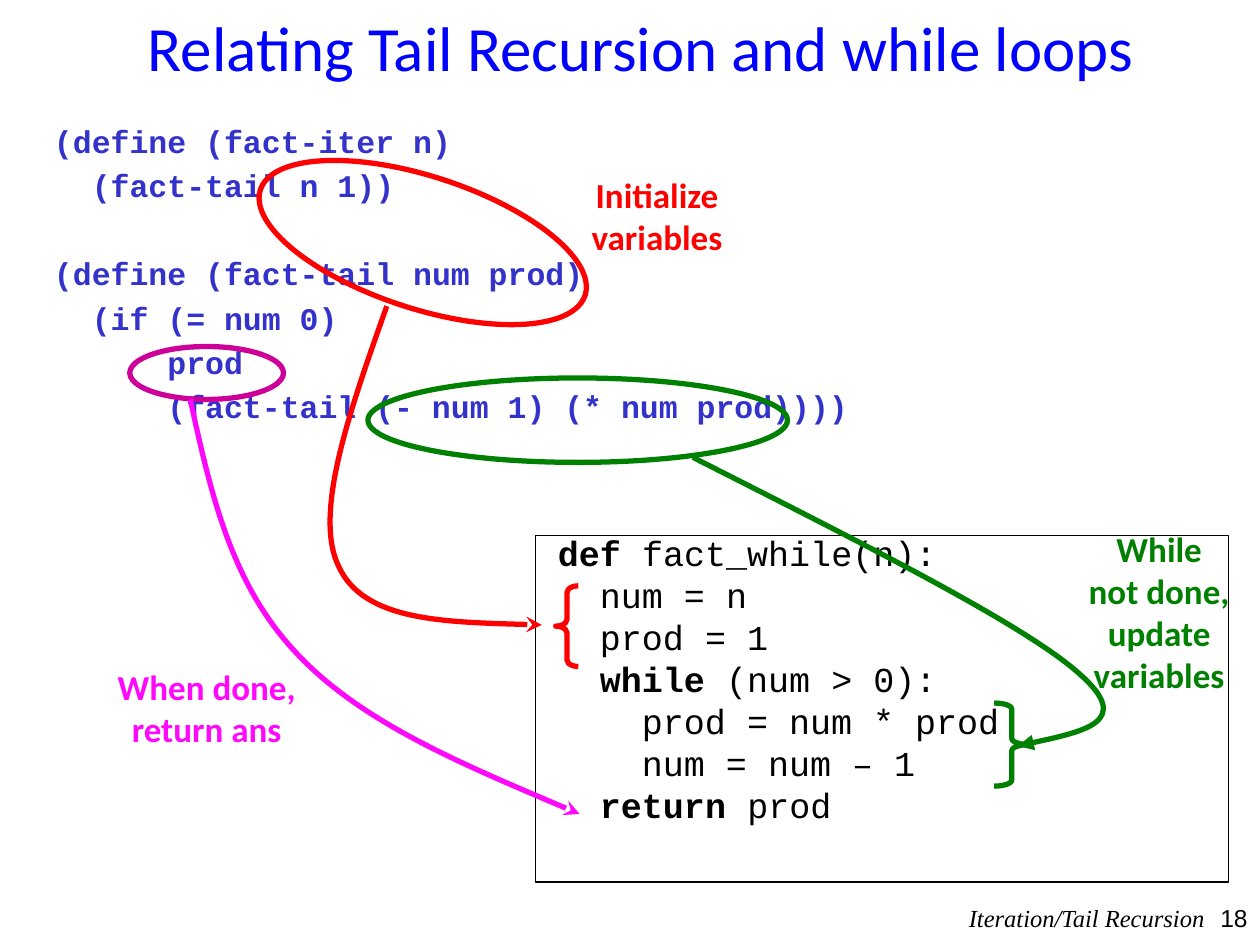
from dataclasses import dataclass
from typing import Optional

import pptx
import pptx.dml.color
import pptx.enum.shapes
import pptx.enum.text
import pptx.oxml
import pptx.oxml.ns
import pptx.util

Inches, Pt, qn = pptx.util.Inches, pptx.util.Pt, pptx.oxml.ns.qn
SHAPE = pptx.enum.shapes.MSO_SHAPE
ALIGN = pptx.enum.text.PP_ALIGN
ANCHOR = pptx.enum.text.MSO_ANCHOR

COLORS = {
    "black": "000000",
    "title": "0000FF",
    "scheme": "3333CC",
    "init": "FF0000",
    "update": "008000",
    "result": "CC0099",
    "return": "FF08FC",
}
KEYWORDS = {"def", "while", "return"}


@dataclass
class CodeLine:
    text: str
    depth: int = 0
    before: float = 0


@dataclass
class Label:
    box: tuple
    lines: tuple
    color: str
    font: dict
    align: ALIGN = ALIGN.CENTER
    anchor: ANCHOR = ANCHOR.TOP
    wrap: bool = True


@dataclass
class Outline:
    kind: SHAPE
    box: tuple
    color: str
    width: float = 3
    rotation: float = 0
    bend: Optional[float] = None


@dataclass
class Curve:
    points: tuple
    color: str
    end: str
    arrow: str


def rgb(name: str):
    return pptx.dml.color.RGBColor.from_string(COLORS[name])


def add_run(p, text: str, color: str, font: dict):
    r = p.add_run()
    r.text = text
    r.font.color.rgb = rgb(color)
    for key, value in font.items():
        setattr(r.font, key, value)


def add_frame(sl, box: tuple, wrap: bool = True):
    tf = sl.shapes.add_textbox(*map(Inches, box)).text_frame
    tf.word_wrap = wrap
    return tf


def paragraphs(tf, count: int):
    return [tf.paragraphs[0]] + [tf.add_paragraph() for _ in range(count - 1)]


def draw_label(sl, label: Label):
    tf = add_frame(sl, label.box, label.wrap)
    tf.vertical_anchor = label.anchor
    for p, text in zip(paragraphs(tf, len(label.lines)), label.lines):
        p.alignment = label.align
        add_run(p, text, label.color, label.font)


def draw_code(sl, box: tuple, lines: list, size: int, color: str, bold: bool):
    tf = add_frame(sl, box)
    font = {"name": "Courier New", "size": Pt(size)}
    for p, line in zip(paragraphs(tf, len(lines)), lines):
        p.line_spacing = Pt(size * 1.2)
        p.space_before = Pt(line.before)
        indent = Pt(line.depth * size * 0.6)
        p._p.get_or_add_pPr().set("marL", str(int(indent)))
        word, space, rest = line.text.partition(" ")
        if word in KEYWORDS:
            add_run(p, word + space, color, font | {"bold": True})
            add_run(p, rest, color, font | {"bold": bold})
        else:
            add_run(p, line.text, color, font | {"bold": bold})


def style_line(s, color: str, width: float):
    s.shadow.inherit = False
    s.fill.background()
    s.line.color.rgb = rgb(color)
    s.line.width = Pt(width)


def draw_outline(sl, outline: Outline):
    s = sl.shapes.add_shape(outline.kind, *map(Inches, outline.box))
    s.rotation = outline.rotation
    if outline.bend is not None:
        s.adjustments[0] = outline.bend
    style_line(s, outline.color, outline.width)


def draw_curve(sl, curve: Curve):
    points = [(Inches(x), Inches(y)) for x, y in curve.points]
    builder = sl.shapes.build_freeform(*points[0])
    builder.add_line_segments(points[1:], close=False)
    s = builder.convert_to_shape()
    style_line(s, curve.color, 3)
    segments = list(s._element.iter(qn("a:lnTo")))
    for i in range(0, len(segments), 3):
        bezier = pptx.oxml.parse_xml(
            f"<a:cubicBezTo {pptx.oxml.ns.nsdecls('a')}/>")
        segments[i].addprevious(bezier)
        for segment in segments[i:i + 3]:
            bezier.append(segment[0])
            segment.getparent().remove(segment)
    s.line._get_or_add_ln().append(pptx.oxml.parse_xml(
        f"<a:{curve.end} {pptx.oxml.ns.nsdecls('a')} type=\"{curve.arrow}\"/>"))


GAP = 3.6
SCHEME = [
    CodeLine("(define (fact-iter n)", 0, GAP),
    CodeLine("(fact-tail n 1))", 2, GAP),
    CodeLine("(define (fact-tail num prod)", 0, 2 * GAP + 21.6),
    CodeLine("(if (= num 0)", 2, GAP),
    CodeLine("prod", 6, GAP),
    CodeLine("(fact-tail (- num 1) (* num prod))))", 6, GAP),
]
PYTHON = [
    CodeLine("def fact_while(n):"),
    CodeLine("num = n", 2),
    CodeLine("prod = 1", 2),
    CodeLine("while (num > 0):", 2),
    CodeLine("prod = num * prod", 4),
    CodeLine("num = num – 1", 4),
    CodeLine("return prod", 2),
]
NOTE = {"name": "Calibri", "size": Pt(20), "bold": True}
LABELS = [
    Label((0.17, 0.08, 9.83, 0.58), ("Relating Tail Recursion and while loops",),
          "title", {"name": "Calibri", "size": Pt(36)}, anchor=ANCHOR.MIDDLE),
    Label((4.58, 1.33, 1.27, 0.77), ("Initialize", "variables"), "init", NOTE,
          wrap=False),
    Label((0.75, 5.23, 1.78, 0.77), ("When done,", "return ans"), "return", NOTE),
    Label((8.4, 4.14, 1.6, 1.89), ("While", "not done,", "update", "variables"),
          "update", NOTE, wrap=False),
    Label((9.5, 7.12, 0.5, 0.38), ("18",), "black",
          {"name": "Arial", "size": Pt(14)}, ALIGN.RIGHT),
    Label((7.58, 7.12, 2.08, 0.38), ("Iteration/Tail Recursion",), "black",
          {"name": "Times New Roman", "size": Pt(14), "italic": True}, ALIGN.RIGHT),
]
OUTLINES = [
    Outline(SHAPE.LEFT_BRACE, (4.41, 4.65, 0.18, 0.64), "init", bend=0.29),
    Outline(SHAPE.OVAL, (2, 1.4, 2.71, 1.05), "init", rotation=18),
    Outline(SHAPE.RECTANGLE, (4.25, 4.25, 5.5, 2.75), "black", width=1),
    Outline(SHAPE.OVAL, (1.03, 2.75, 1.22, 0.42), "result"),
    Outline(SHAPE.RIGHT_BRACE, (7.89, 5.58, 0.28, 0.66), "update", bend=0.17),
    Outline(SHAPE.OVAL, (2.92, 3, 3.33, 0.67), "update"),
]
CURVES = [
    Curve(((3.07, 2.43), (2.78, 3.25), (2.48, 4.08), (2.69, 4.5),
           (2.89, 4.93), (3.6, 4.94), (4.3, 4.96)), "init", "tailEnd", "stealth"),
    Curve(((8.08, 5.92), (8.54, 5.82), (9, 5.73), (8.57, 5.35),
           (8.14, 4.96), (6.82, 4.3), (5.5, 3.63)), "update", "headEnd", "triangle"),
    Curve(((1.51, 3.17), (1.67, 3.9), (1.83, 4.63), (2.35, 5.18),
           (2.86, 5.73), (3.73, 6.09), (4.6, 6.46)), "return", "tailEnd", "stealth"),
]


def main():
    prs = pptx.Presentation()
    prs.slide_width, prs.slide_height = Inches(10), Inches(7.5)
    sl = prs.slides.add_slide(prs.slide_layouts[6])
    draw_code(sl, (0.33, 0.92, 7.08, 2.75), SCHEME, 18, "scheme", True)
    draw_code(sl, (4.33, 4.17, 5.34, 2.58), PYTHON, 20, "black", False)
    for draw, items in ((draw_outline, OUTLINES), (draw_curve, CURVES),
                        (draw_label, LABELS)):
        for item in items:
            draw(sl, item)
    prs.save("out.pptx")


if __name__ == "__main__":
    main()
